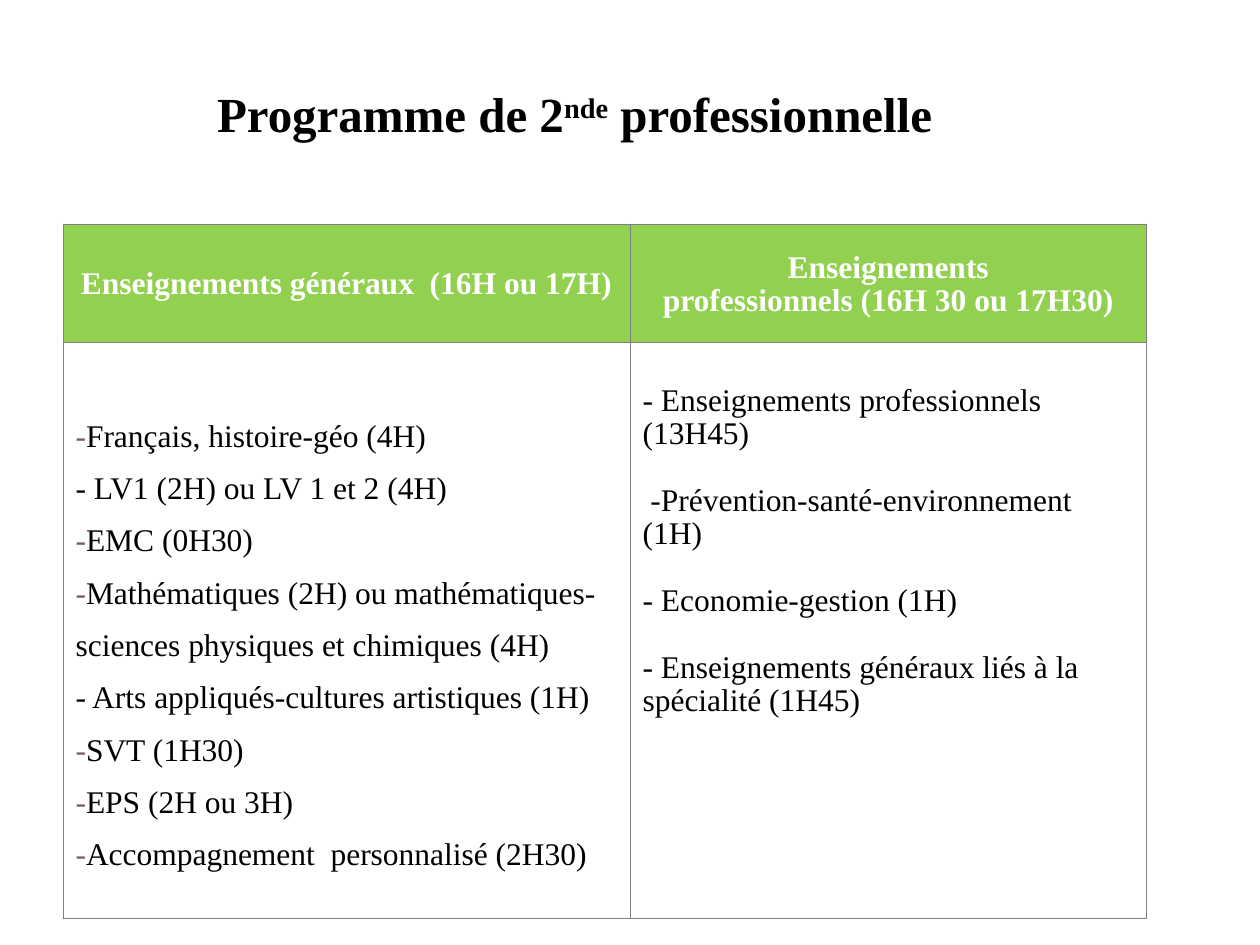
from pptx import Presentation
from pptx.dml.color import RGBColor
from pptx.enum.text import MSO_ANCHOR as ANCHOR, PP_ALIGN as ALIGN
from pptx.oxml import parse_xml
from pptx.oxml.ns import nsdecls
from pptx.util import Inches, Pt

FONT = "Times New Roman"
BODY_SIZE = 18


def rgb(value):
    return RGBColor.from_string(value)


def add_run(p, text, size, color, bold):
    r = p.add_run()
    r.text = text
    for name, value in {"name": FONT, "size": Pt(size), "bold": bold}.items():
        setattr(r.font, name, value)
    r.font.color.rgb = rgb(color)
    return r


prs = Presentation()
prs.slide_width, prs.slide_height = Inches(10), Inches(7.5)
s = prs.slides.add_slide(prs.slide_layouts[6])

# Title
tf = s.shapes.add_textbox(Inches(0.5), Inches(0.57), Inches(8.12), Inches(0.71)).text_frame
title_format = {"word_wrap": True, "vertical_anchor": ANCHOR.MIDDLE, "margin_left": 0,
                "margin_right": 0, "margin_top": 0, "margin_bottom": 0}
for name, value in title_format.items():
    setattr(tf, name, value)
p = tf.paragraphs[0]
p.alignment, p.line_spacing = ALIGN.CENTER, 0.93
for text, baseline in [("Programme de 2", 0), ("nde", 30000), (" professionnelle", 0)]:
    r = add_run(p, text, 28, "000000", True)
    r.font._element.set("baseline", str(baseline))

# Cell contents: a leading "*" marks a coloured dash bullet
headers = [
    ["Enseignements généraux  (16H ou 17H)"],
    ["Enseignements", "professionnels (16H 30 ou 17H30)"],
]
subjects = [
    ["*Français, histoire-géo (4H)",
     "- LV1 (2H) ou LV 1 et 2 (4H)",
     "*EMC (0H30)",
     "*Mathématiques (2H) ou mathématiques-sciences physiques et chimiques (4H)",
     "- Arts appliqués-cultures artistiques (1H)",
     "*SVT (1H30)",
     "*EPS (2H ou 3H)",
     "*Accompagnement  personnalisé (2H30)"],
    ["- Enseignements professionnels (13H45)",
     " -Prévention-santé-environnement (1H)",
     "- Economie-gestion (1H)",
     "- Enseignements généraux liés à la spécialité (1H45)"],
]

# Format of each cell: line spacing, gap between paragraphs (pt), top margin (in)
layouts = [[(0.96, 0, 0.07), (0.96, 0, 0.07)],
           [(1.5, 0, 0.47), (0.96, 19, 0.33)]]

# Table
table = s.shapes.add_table(2, 2, Inches(0.5), Inches(1.78), Inches(8.6), Inches(5.4)).table
table.first_row = table.horz_banding = False
for col, width in zip(table.columns, (4.5, 4.1)):
    col.width = Inches(width)
for row, height in zip(table.rows, (0.94, 4.46)):
    row.height = Inches(height)

for i, contents in enumerate([headers, subjects]):
    is_header = i == 0
    for j, lines in enumerate(contents):
        cell = table.cell(i, j)
        spacing, gap, top = layouts[i][j]
        cell_format = {
            "margin_left": Inches(0.1), "margin_right": Inches(0.1),
            "margin_top": Inches(top), "margin_bottom": Inches(0.05),
            "vertical_anchor": ANCHOR.MIDDLE if is_header else ANCHOR.TOP,
        }
        for name, value in cell_format.items():
            setattr(cell, name, value)

        # Borders, then fill
        tcPr = cell._tc.get_or_add_tcPr()
        for side in ("lnL", "lnR", "lnT", "lnB"):
            tcPr.append(parse_xml(
                f'<a:{side} {nsdecls("a")} w="{Pt(0.45)}"><a:solidFill>'
                f'<a:srgbClr val="7F7F7F"/></a:solidFill></a:{side}>'))
        if is_header:
            cell.fill.solid()
            cell.fill.fore_color.rgb = rgb("92D050")
        else:
            cell.fill.background()

        # Text
        tf = cell.text_frame
        for k, line in enumerate(lines):
            p = tf.add_paragraph() if k else tf.paragraphs[0]
            p.alignment = ALIGN.CENTER if is_header else ALIGN.LEFT
            p.line_spacing = spacing
            p.space_before = Pt(gap if k else 0)
            if line.startswith("*"):
                pPr = p._p.get_or_add_pPr()
                for xml in ('<a:buClr {}><a:srgbClr val="775F55"/></a:buClr>',
                            '<a:buFont {} typeface="' + FONT + '"/>',
                            '<a:buChar {} char="-"/>'):
                    pPr.append(parse_xml(xml.format(nsdecls("a"))))
            add_run(p, line.lstrip("*"), BODY_SIZE,
                    "FFFFFF" if is_header else "000000", is_header)

prs.save("out.pptx")
